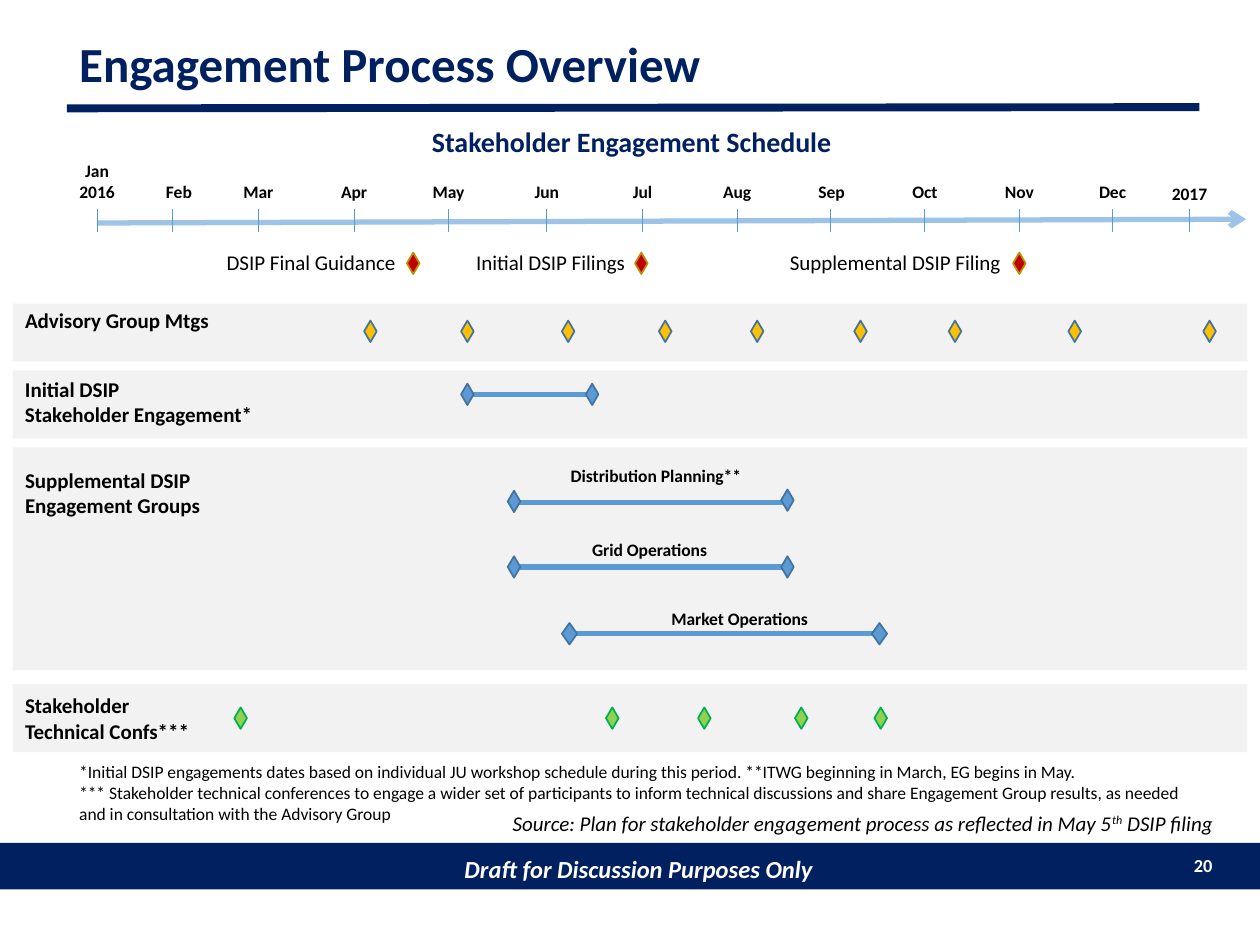
import pptx
import pptx.util
import pptx.dml.color
import pptx.enum.shapes
import pptx.enum.text
import pptx.oxml.ns
import lxml.etree

Inches = pptx.util.Inches
Pt = pptx.util.Pt
color = pptx.dml.color.RGBColor.from_string
SHAPE = pptx.enum.shapes.MSO_SHAPE
ALIGN = pptx.enum.text.PP_ALIGN
MIDDLE = pptx.enum.text.MSO_ANCHOR.MIDDLE

NAVY = "002060"
BLUE = "5B9BD5"
BLUE_EDGE = "43739E"

deck = pptx.Presentation()
deck.slide_width = Inches(10)
deck.slide_height = Inches(7.5)
page = deck.slides.add_slide(deck.slide_layouts[6])


def add_filled(preset, left, top, width, height, fill, edge=None):
    shape = page.shapes.add_shape(
        preset, Inches(left), Inches(top), Inches(width), Inches(height))
    shape.shadow.inherit = False
    shape.fill.solid()
    shape.fill.fore_color.rgb = color(fill)
    if edge:
        shape.line.color.rgb = color(edge)
        shape.line.width = Pt(1)
    else:
        shape.line.fill.background()
    return shape


def add_text(paragraphs, left, top, width, height, size, bold=False, italic=False,
             ink="000000", align=ALIGN.LEFT, wrap=True):
    """Add a text box; each paragraph is a list of run texts."""
    box = page.shapes.add_textbox(
        Inches(left), Inches(top), Inches(width), Inches(height))
    frame = box.text_frame
    frame.word_wrap = wrap
    for index, texts in enumerate(paragraphs):
        para = frame.add_paragraph() if index else frame.paragraphs[0]
        para.alignment = align
        for text in texts:
            span = para.add_run()
            span.text = text
            span.font.name = "Calibri"
            span.font.size = Pt(size)
            span.font.bold = bold
            span.font.italic = italic
            span.font.color.rgb = color(ink)
    return box


# Bands and footer
for top, height in [(2.41, 0.46), (2.94, 0.54), (3.55, 1.77), (5.43, 0.54)]:
    add_filled(SHAPE.RECTANGLE, 0.1, top, 9.8, height, "F2F2F2")
add_filled(SHAPE.RECTANGLE, 0, 6.69, 10, 0.37, NAVY)
footer = add_text([["Draft for Discussion Purposes Only"]], 0.07, 6.71, 10, 0.37, 14,
                  bold=True, italic=True, ink="FFFFFF", align=ALIGN.CENTER)
footer.text_frame.vertical_anchor = MIDDLE
add_text([["20"]], 9.31, 6.73, 0.41, 0.29, 10.5, bold=True, ink="FFFFFF",
         align=ALIGN.RIGHT)

# Headings
title = add_text([["Engagement Process Overview"]], 0.53, 0.25, 8.99, 0.55, 28,
                 bold=True, ink=NAVY)
title.text_frame.vertical_anchor = MIDDLE
title.text_frame.paragraphs[0].line_spacing = 0.9
add_text([["Stakeholder Engagement Schedule"]], 3.33, 0.94, 4.17, 0.37, 16,
         bold=True, ink=NAVY)

# Month label, tick position, label top, label centre
months = [
    ("Jan 2016", 0.77, 1.22, 0.77), ("Feb", 1.37, 1.39, 1.42),
    ("Mar", 2.05, 1.39, 2.05), ("Apr", 2.81, 1.39, 2.81),
    ("May", 3.56, 1.39, 3.56), ("Jun", 4.34, 1.39, 4.34),
    ("Jul", 5.1, 1.39, 5.1), ("Aug", 5.85, 1.39, 5.85),
    ("Sep", 6.59, 1.39, 6.6), ("Oct", 7.34, 1.39, 7.34),
    ("Nov", 8.09, 1.39, 8.09), ("Dec", 8.83, 1.39, 8.83),
    ("2017", 9.44, 1.4, 9.44),
]
for label, tick, top, center in months:
    add_text([[label]], center - 0.255, top, 0.51, 1.66 - top, 10, bold=True,
             align=ALIGN.CENTER)

# Engagement periods: start, end, line height, end heights, diamond width
periods = [
    (3.71, 4.7, 3.13, 3.13, 3.13, 0.1),
    (4.08, 6.25, 3.99, 3.98, 3.97, 0.1),
    (4.08, 6.25, 4.5, 4.5, 4.5, 0.1),
    (4.52, 6.98, 5.03, 5.03, 5.03, 0.12),
]

# Lines: start x and y, end x and y, colour, width
axis = (0.77, 1.77, 9.89, 1.74, "9DC3E6", 3)
lines = [(0.53, 0.86, 9.52, 0.85, NAVY, 4.5), axis]
lines += [(tick, 1.66, tick, 1.84, BLUE, 0.5) for _, tick, _, _ in months]
lines += [(start, y, end, y, BLUE, 3) for start, end, y, _, _, _ in periods]
for line in lines:
    x1, y1, x2, y2, ink, weight = line
    connector = page.shapes.add_connector(
        pptx.enum.shapes.MSO_CONNECTOR.STRAIGHT,
        Inches(x1), Inches(y1), Inches(x2), Inches(y2))
    connector.line.color.rgb = color(ink)
    connector.line.width = Pt(weight)
    properties = connector.line._get_or_add_ln()
    if line is axis:
        lxml.etree.SubElement(
            properties, pptx.oxml.ns.qn("a:tailEnd"), type="arrow")
    lxml.etree.SubElement(
        properties.getparent(), pptx.oxml.ns.qn("a:effectLst"))

# Diamonds: centre x and y, width, fill, edge
diamonds = [(x, 2.09, 0.1, "C00000", "BD8E00") for x in (3.28, 5.09, 8.09)]
diamonds += [(x, 2.63, 0.1, "FFC000", BLUE_EDGE) for x in
             (2.94, 3.71, 4.51, 5.28, 6.01, 6.83, 7.58, 8.53, 9.6)]
for start, end, _, start_y, end_y, width in periods:
    diamonds += [(start, start_y, width, BLUE, BLUE_EDGE),
                 (end, end_y, width, BLUE, BLUE_EDGE)]
diamonds += [(x, 5.7, 0.1, "92D050", "00B050") for x in
             (1.91, 4.86, 5.59, 6.36, 6.99)]
for x, y, width, fill, edge in diamonds:
    add_filled(SHAPE.FLOWCHART_DECISION, x - width / 2, y - 0.085, width, 0.17,
               fill, edge)

# Labels
for text, left, width in [("DSIP Final Guidance", 1.7, 1.56),
                          ("Initial DSIP Filings", 3.68, 1.4),
                          ("Supplemental DSIP Filing", 6.17, 1.96)]:
    add_text([[text]], left, 1.93, width, 0.3, 12, wrap=False)

for texts, top, width in [
        (["Advisory Group Mtgs"], 2.39, 1.68),
        (["Initial DSIP", "Stakeholder Engagement*"], 2.94, 2.03),
        (["Supplemental DSIP", "Engagement Groups"], 3.66, 1.61),
        (["Stakeholder", "Technical Confs***"], 5.45, 1.52)]:
    add_text([[text] for text in texts], 0.1, top, width, 0.1 + 0.2 * len(texts), 12,
             bold=True, wrap=False)

for text, left, top, width in [("Distribution Planning**", 4.35, 3.64, 1.71),
                               ("Grid Operations", 4.3, 4.23, 1.71),
                               ("Market Operations", 4.9, 4.78, 1.94)]:
    add_text([[text]], left, top, width, 0.27, 10, bold=True, align=ALIGN.CENTER)

# Notes below the chart
add_text([
    ["*Initial DSIP engagements dates based on individual JU workshop schedule "
     "during this period. **ITWG beginning in March, EG begins in May."],
    ["*** Stakeholder technical conferences to engage a wider set of participants to "
     "inform technical discussions and share Engagement Group results, as needed and "
     "in consultation with the Advisory Group"],
], 0.53, 5.99, 9.02, 0.61, 10)
source = add_text([[
    "Source: Plan for stakeholder engagement process as reflected in May 5",
    "th", " DSIP filing"]], 3.97, 6.38, 5.93, 0.3, 12, italic=True)
ordinal = source.text_frame.paragraphs[0].runs[1]
ordinal.font._element.set("baseline", "30000")

deck.save("out.pptx")
